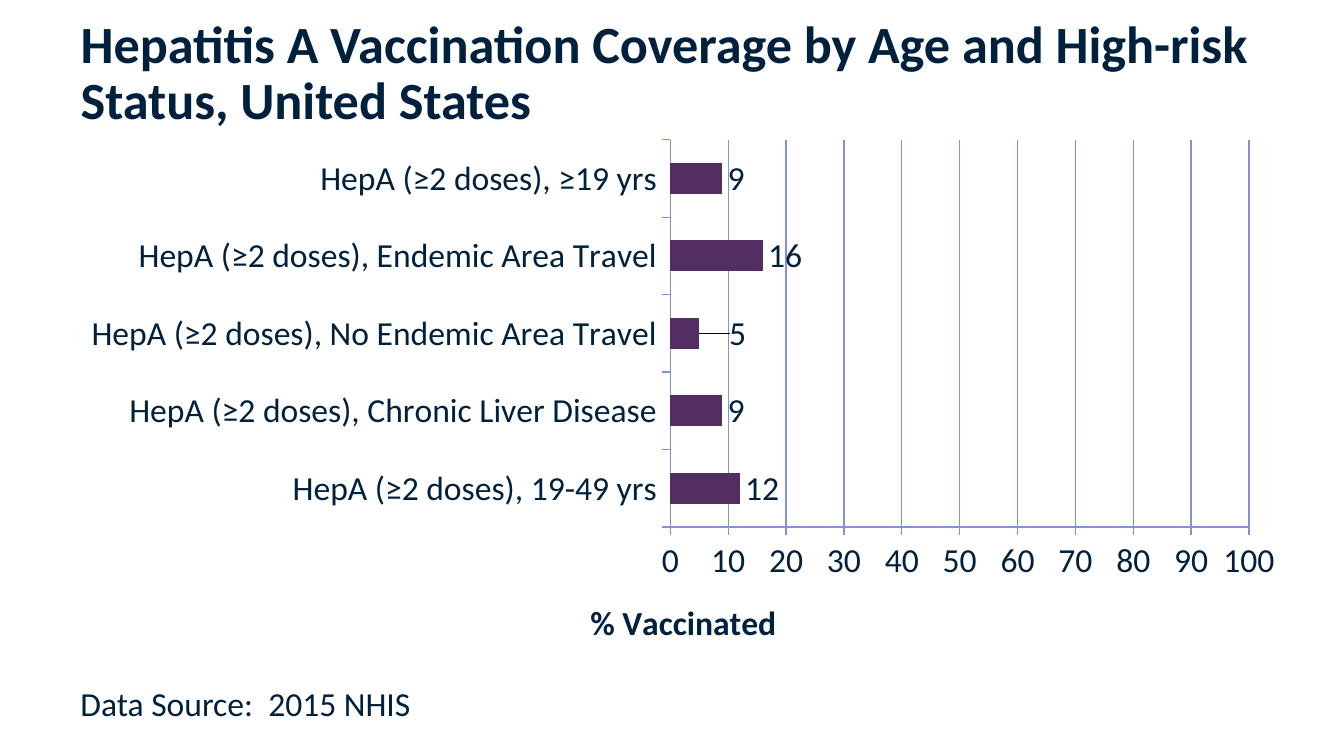
"""Build the hepatitis A vaccination coverage slide."""
from lxml.etree import SubElement
from pptx import Presentation
from pptx.chart.data import CategoryChartData
from pptx.dml.color import RGBColor
from pptx.enum.chart import XL_CHART_TYPE, XL_LABEL_POSITION, XL_TICK_MARK
from pptx.enum.text import MSO_ANCHOR, PP_ALIGN
from pptx.oxml import parse_xml
from pptx.oxml.ns import nsdecls, qn
from pptx.util import Inches, Pt

COLORS = {"text": "00213D", "bar": "532E63", "grid": "8490DB"}
COVERAGE = {
    "HepA (≥2 doses), 19-49 yrs": 12,
    "HepA (≥2 doses), Chronic Liver Disease": 9,
    "HepA (≥2 doses), No Endemic Area Travel": 5,
    "HepA (≥2 doses), Endemic Area Travel": 16,
    "HepA (≥2 doses), ≥19 yrs": 9,
}
NO_LEADER_LINES = f"""<c:extLst {nsdecls('c')}>
<c:ext uri="{{CE6537A1-D6FC-4f65-9D91-7224C49458BB}}"
 xmlns:c15="http://schemas.microsoft.com/office/drawing/2012/chart">
<c15:showLeaderLines val="0"/></c:ext></c:extLst>"""


def format_font(font, size=18, bold=False):
    """Apply the slide's font settings."""
    for name, value in {"name": "Calibri", "size": Pt(size), "bold": bold}.items():
        setattr(font, name, value)
    font.color.rgb = RGBColor.from_string(COLORS["text"])


def make_layout(**settings):
    """Return a manual chart layout."""
    layout = parse_xml(f"<c:layout {nsdecls('c')}><c:manualLayout/></c:layout>")
    for name, value in settings.items():
        SubElement(layout[0], qn(f"c:{name}")).set("val", str(value))
    return layout


presentation = Presentation()
presentation.slide_width = Inches(10)
presentation.slide_height = Inches(10 * 9 / 16)
slide = presentation.slides.add_slide(presentation.slide_layouts[5])

title = slide.shapes.title
title_box = {"left": 0.5, "top": 0.08, "width": 9, "height": 0.94}
for name, value in title_box.items():
    setattr(title, name, Inches(value))
title.text_frame.text = "Hepatitis A Vaccination Coverage by Age and High-risk Status, United States"
title.text_frame.vertical_anchor = MSO_ANCHOR.BOTTOM
paragraph = title.text_frame.paragraphs[0]
paragraph.alignment = PP_ALIGN.LEFT
paragraph.line_spacing = Pt(30)
format_font(paragraph.runs[0].font, 28, True)

source = slide.shapes.add_textbox(Inches(0.5), Inches(5.03), Inches(3.5), Inches(0.4))
source.text_frame.word_wrap = True
source.text_frame.text = "Data Source:  2015 NHIS"
format_font(source.text_frame.paragraphs[0].runs[0].font)

chart_data = CategoryChartData(number_format="0")
chart_data.categories = list(COVERAGE)
chart_data.add_series("Series 1", list(COVERAGE.values()))
chart = slide.shapes.add_chart(
    XL_CHART_TYPE.BAR_CLUSTERED, Inches(0.5), Inches(0.96), Inches(9.16), Inches(4.06), chart_data
).chart
chart.has_legend = False
chart.has_title = False
format_font(chart.font)

plot = chart.plots[0]
plot.gap_width = 150
plot.vary_by_categories = False
series = plot.series[0]
series.format.fill.solid()
series.format.fill.fore_color.rgb = RGBColor.from_string(COLORS["bar"])
label_format = {
    "show_value": True,
    "number_format": "0",
    "number_format_is_linked": False,
    "position": XL_LABEL_POSITION.OUTSIDE_END,
}
for name, value in label_format.items():
    setattr(series.data_labels, name, value)
format_font(series.data_labels.font)

shifted_label = series.points[2].data_label
format_font(shifted_label.font)
shifted_label.position = XL_LABEL_POSITION.OUTSIDE_END
label_index = chart.element.find(f".//{qn('c:dLbl')}/{qn('c:idx')}")
label_index.addnext(make_layout(x=0.02, y=0))
chart.element.find(f".//{qn('c:ser')}/{qn('c:dLbls')}").append(parse_xml(NO_LEADER_LINES))

value_axis = chart.value_axis
value_format = {
    "minimum_scale": 0,
    "maximum_scale": 100,
    "major_unit": 10,
    "has_major_gridlines": True,
    "has_title": True,
}
for name, value in value_format.items():
    setattr(value_axis, name, value)
value_axis.tick_labels.number_format = "0"
value_axis.tick_labels.number_format_is_linked = False
axis_title = value_axis.axis_title
axis_title.text_frame.text = "% Vaccinated"
format_font(axis_title.text_frame.paragraphs[0].runs[0].font, 18, True)

for axis in (chart.category_axis, value_axis):
    axis.major_tick_mark = XL_TICK_MARK.OUTSIDE
    axis.minor_tick_mark = XL_TICK_MARK.NONE
    format_font(axis.tick_labels.font)
for line in (chart.category_axis.format.line, value_axis.format.line, value_axis.major_gridlines.format.line):
    line.color.rgb = RGBColor.from_string(COLORS["grid"])
    line.width = Pt(0.75)

plot_area = chart.element.find(f".//{qn('c:plotArea')}")
title_element = plot_area.find(f".//{qn('c:title')}")
for parent in (plot_area, title_element):
    for layout in parent.findall(qn("c:layout")):
        parent.remove(layout)
plot_area.insert(0, make_layout(layoutTarget="inner", xMode="edge", yMode="edge", x=0.49, y=0.02, w=0.47, h=0.71))
title_element.find(qn("c:tx")).addnext(make_layout(xMode="edge", yMode="edge", x=0.42, y=0.85))

presentation.save("out.pptx")
